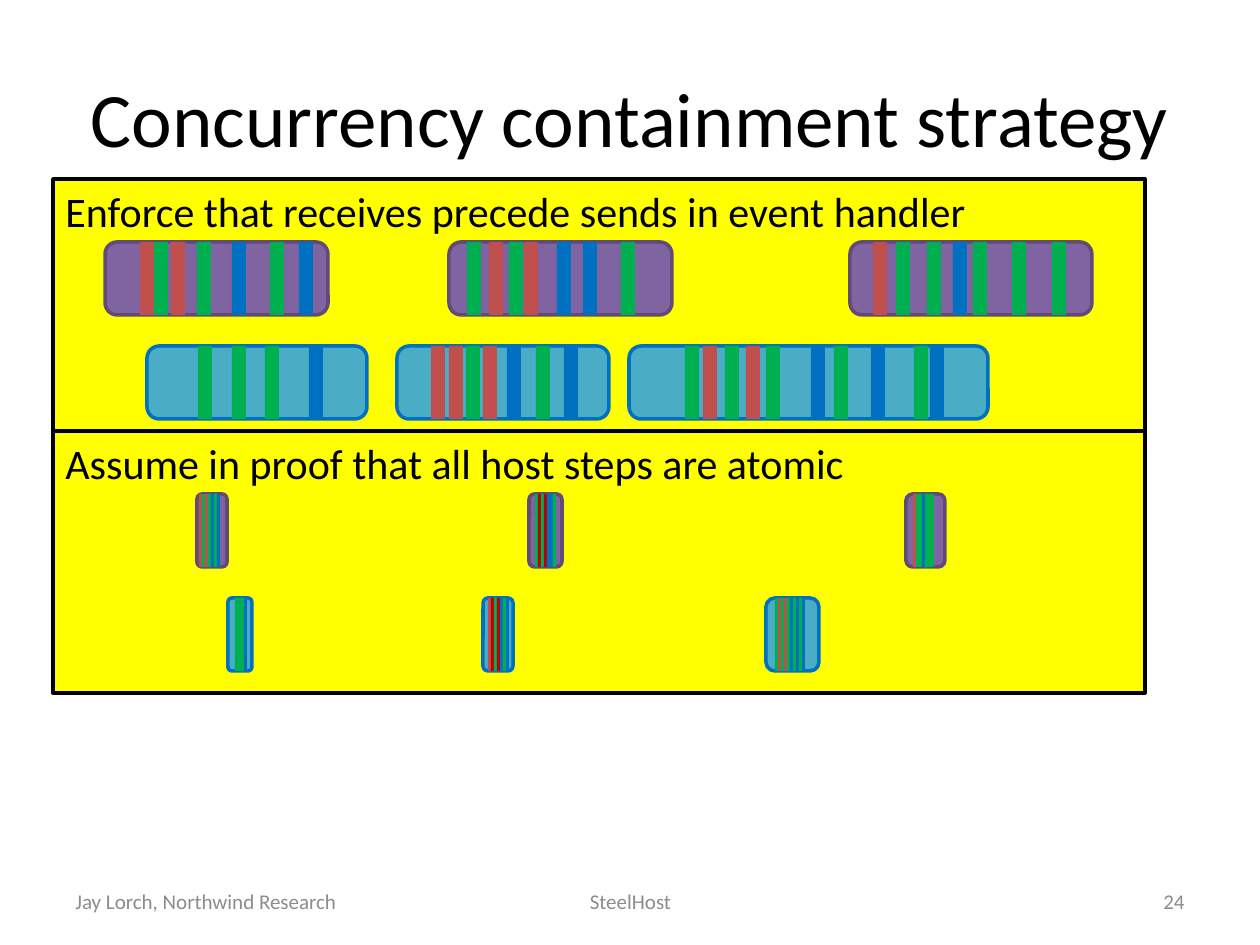
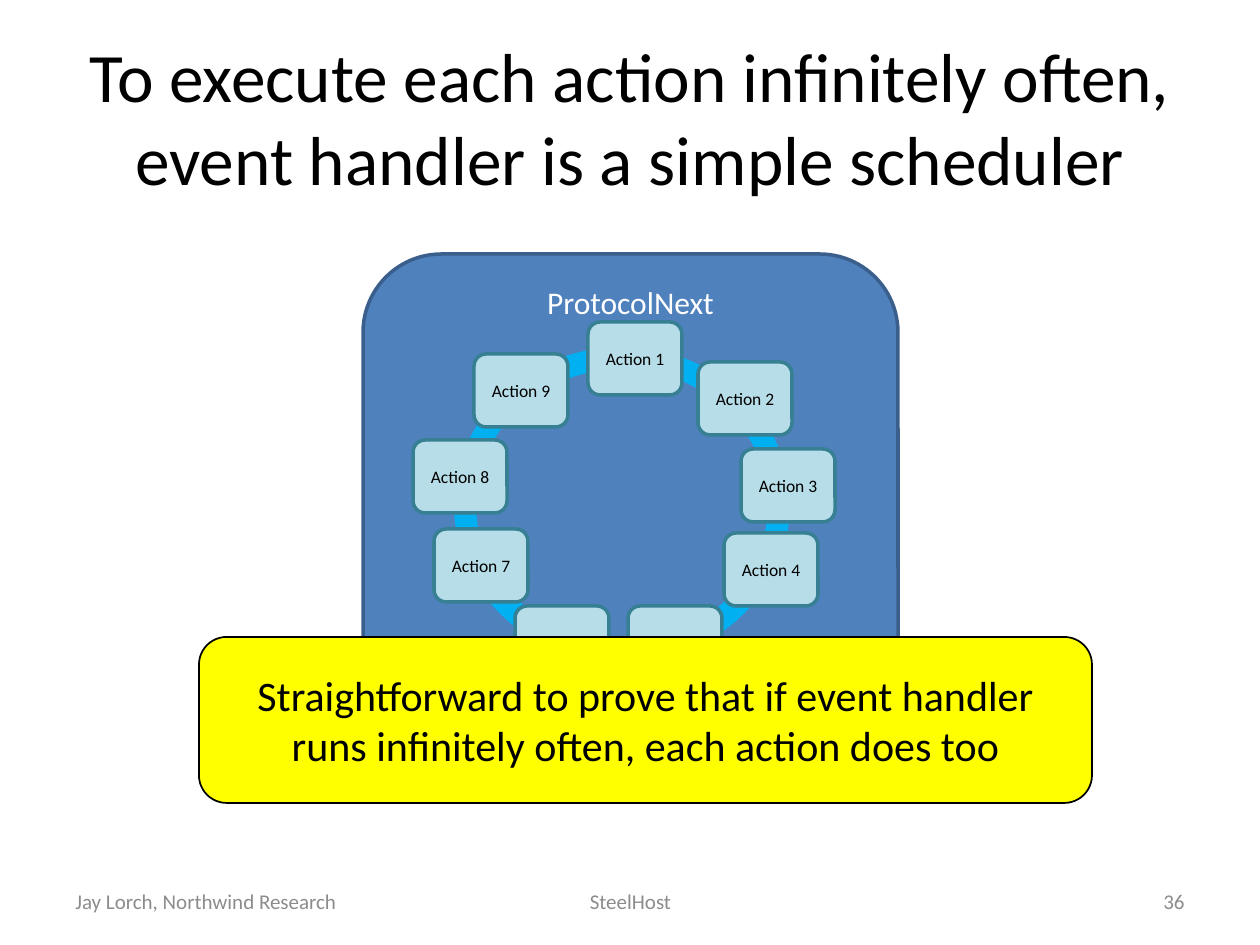
from pptx import Presentation
from pptx.util import Emu, Pt
from pptx.dml.color import RGBColor
from pptx.enum.shapes import MSO_SHAPE as SHAPE
from pptx.enum.text import MSO_ANCHOR as ANCHOR, MSO_AUTO_SIZE as AUTO, PP_ALIGN as ALIGN

SCALE = 914400 / 126  # EMU per px
FONT = "Calibri"
BLACK = RGBColor(0x00, 0x00, 0x00)
WHITE = RGBColor(0xFF, 0xFF, 0xFF)
GREY = RGBColor(0x8C, 0x8C, 0x8C)
YELLOW = RGBColor(0xFF, 0xFF, 0x00)
PURPLE = RGBColor(0x80, 0x64, 0xA2)
DARK_PURPLE = RGBColor(0x5F, 0x4A, 0x78)
TEAL = RGBColor(0x4B, 0xAC, 0xC6)
DARK_TEAL = RGBColor(0x37, 0x7F, 0x92)
PALE_TEAL = RGBColor(0xB7, 0xDE, 0xE8)
RED = RGBColor(0xC0, 0x50, 0x4D)
DARK_RED = RGBColor(0xC0, 0x00, 0x00)
GREEN = RGBColor(0x00, 0xB0, 0x50)
BLUE = RGBColor(0x00, 0x70, 0xC0)
SKY = RGBColor(0x00, 0xB0, 0xF0)
BOX_BLUE = RGBColor(0x4F, 0x81, 0xBD)
BOX_EDGE = RGBColor(0x3A, 0x5F, 0x8C)


def add_box(s, kind, box, fill, line=None, width=2):
    sp = s.shapes.add_shape(kind, *[Emu(round(n * SCALE)) for n in box])
    sp.shadow.inherit = False
    sp.fill.solid()
    sp.fill.fore_color.rgb = fill
    if line is None:
        sp.line.fill.background()
    else:
        sp.line.color.rgb = line
        sp.line.width = Pt(width)
    return sp


def write(sp, text, size, color=BLACK, align=ALIGN.CENTER, anchor=ANCHOR.MIDDLE):
    tf = sp.text_frame
    tf.word_wrap = True
    tf.auto_size = AUTO.NONE
    tf.vertical_anchor = anchor
    p = tf.paragraphs[0]
    p.text = text
    p.alignment = align
    p.font.name, p.font.size, p.font.color.rgb = FONT, Pt(size), color


prs = Presentation()
prs.slide_width, prs.slide_height = Emu(round(1260 * SCALE)), Emu(round(945 * SCALE))

# Titles and footers
slides = []
for title, size, number in [
    ("Concurrency containment strategy", 44, "24"),
    ("To execute each action infinitely often, event handler is a simple scheduler", 39.6, "36"),
]:
    s = prs.slides.add_slide(prs.slide_layouts[5])
    slides.append(s)
    for left, width, text, align in [
        (63, 294, "Jay Lorch, Northwind Research", ALIGN.LEFT),
        (431, 399, "SteelHost", ALIGN.CENTER),
        (903, 294, number, ALIGN.RIGHT),
    ]:
        footer = s.shapes.add_textbox(*[Emu(round(n * SCALE)) for n in (left, 876, width, 50)])
        write(footer, text, 12, GREY, align)
    sp = s.shapes.title
    sp.left, sp.top, sp.width, sp.height = [Emu(round(n * SCALE)) for n in (63, 38, 1134, 157)]
    write(sp, title, size)

# Slide 1: interleaved and atomic host steps
s = slides[0]
EVENTS = {"R": RED, "D": DARK_RED, "G": GREEN, "B": BLUE}
HOSTS = [(PURPLE, DARK_PURPLE), (TEAL, BLUE)]
STEP_H, HOST_GAP = 73, 104

# Each step: left, width, events, left of each event
interleaved = [
    [(105, 223, "RGRGBGB", [140, 154, 171, 197, 232, 270, 299]),
     (449, 223, "GRGRBBG", [467, 489, 509, 524, 557, 583, 621]),
     (850, 242, "RGGBGGG", [873, 896, 927, 953, 973, 1012, 1052])],
    [(147, 220, "GGGB", [198, 232, 265, 309]),
     (397, 212, "RRGRBGB", [431, 449, 466, 483, 507, 536, 564]),
     (629, 359, "GRGRGBGBGB", [685, 703, 725, 746, 766, 811, 834, 871, 914, 930])],
]
atomic = [
    [(197, 30, "RGRGBGB", range(199, 220, 3)),
     (529, 33, "GDGDBBG", range(535, 556, 3)),
     (906, 39, "RGGBGGG", range(913, 934, 3))],
    [(228, 24, "GGGB", range(235, 247, 3)),
     (483, 30, "RDGDBGB", range(488, 509, 3)),
     (766, 53, "GRGRGBGBGB", range(775, 805, 3))],
]
for top, height, text, hosts, event_w in [
    (179, 256, "Enforce that receives precede sends in event handler", interleaved, 14),
    (431, 262, "Assume in proof that all host steps are atomic", atomic, 3),
]:
    panel = add_box(s, SHAPE.RECTANGLE, (53, top, 1092, height), YELLOW, BLACK)
    write(panel, text, 24, align=ALIGN.LEFT, anchor=ANCHOR.TOP)
    for row, (steps, (fill, edge)) in enumerate(zip(hosts, HOSTS)):
        y = top + 63 + row * HOST_GAP
        for left, width, events, lefts in steps:
            add_box(s, SHAPE.ROUNDED_RECTANGLE, (left, y, width, STEP_H), fill, edge)
            for event, x in zip(events, lefts):
                add_box(s, SHAPE.RECTANGLE, (x, y, event_w, STEP_H), EVENTS[event])

# Slide 2: ring of actions
s = slides[1]
protocol = add_box(s, SHAPE.ROUNDED_RECTANGLE, (363, 254, 535, 470), BOX_BLUE, BOX_EDGE)
write(protocol, "ProtocolNext", 18, WHITE, anchor=ANCHOR.TOP)
ring = add_box(s, SHAPE.DONUT, (454, 347, 336, 316), SKY)
ring.adjustments[0] = 0.07

positions = [(588, 322), (698, 362), (741, 449), (724, 533), (628, 606),
             (515, 606), (434, 529), (413, 440), (474, 354)]
for number, (x, y) in enumerate(positions, 1):
    action = add_box(s, SHAPE.ROUNDED_RECTANGLE, (x, y, 94, 73), PALE_TEAL, DARK_TEAL)
    write(action, f"Action {number}", 10)

# Conclusion
note = add_box(s, SHAPE.ROUNDED_RECTANGLE, (199, 637, 893, 166), YELLOW, BLACK, 1)
write(note, "Straightforward to prove that if event handler runs infinitely often, "
            "each action does too", 24)

prs.save("out.pptx")
